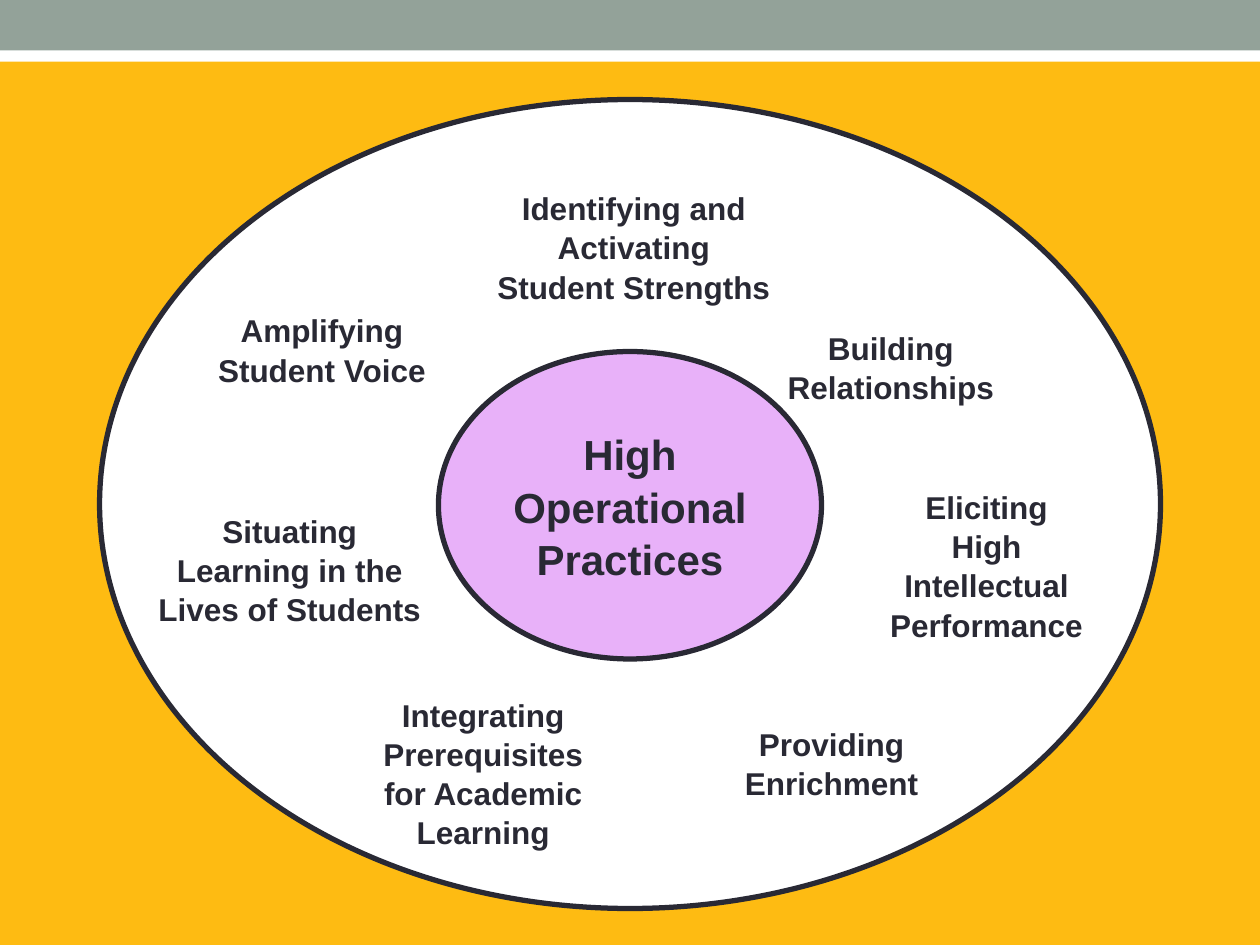
"""Build the High Operational Practices slide."""
from dataclasses import dataclass
from typing import Any

from pptx import Presentation
from pptx.dml.color import RGBColor
from pptx.enum.shapes import MSO_SHAPE
from pptx.enum.text import MSO_ANCHOR, MSO_AUTO_SIZE, PP_ALIGN
from pptx.util import Inches, Pt

GOLD = RGBColor(0xFE, 0xBB, 0x12)
SAGE = RGBColor(0x93, 0xA2, 0x99)
WHITE = RGBColor(0xFF, 0xFF, 0xFF)
LILAC = RGBColor(0xE8, 0xB1, 0xF9)
INK = RGBColor(0x29, 0x29, 0x34)

PRACTICES = [
    ("Identifying and Activating Student Strengths", 3.84, 1.44, 2.38, 1.01),
    ("Providing Enrichment", 5.58, 5.69, 2.04, 0.71),
    ("Building Relationships", 6.1, 2.55, 1.94, 0.71),
    ("Eliciting High Intellectual Performance", 6.96, 3.81, 1.74, 1.31),
    ("Integrating Prerequisites for Academic Learning", 2.81, 5.46, 2.05, 1.31),
    ("Situating Learning in the Lives of Students", 1.15, 4, 2.3, 1.01),
    ("Amplifying Student Voice", 1.47, 2.41, 2.17, 0.71),
]


@dataclass
class Painter:
    slide: Any
    font: str = "Arial"
    ink: RGBColor = INK
    outline: float = 3
    spacing: float = 1.04

    def add_text(self, tf, text, size):
        tf.word_wrap = True
        p = tf.paragraphs[0]
        p.alignment = PP_ALIGN.CENTER
        p.line_spacing = self.spacing
        r = p.add_run()
        r.text = text
        r.font.name = self.font
        r.font.size = Pt(size)
        r.font.bold = True
        r.font.color.rgb = self.ink

    def shape(self, kind, box, color):
        sp = self.slide.shapes.add_shape(kind, *map(Inches, box))
        sp.shadow.inherit = False
        sp.fill.solid()
        sp.fill.fore_color.rgb = color
        return sp

    def band(self, top, height, color):
        sp = self.shape(MSO_SHAPE.RECTANGLE, (0, top, 10, height), color)
        sp.line.fill.background()

    def ellipse(self, box, color, text=None):
        sp = self.shape(MSO_SHAPE.OVAL, box, color)
        sp.line.color.rgb = self.ink
        sp.line.width = Pt(self.outline)
        if text:
            sp.text_frame.vertical_anchor = MSO_ANCHOR.MIDDLE
            self.add_text(sp.text_frame, text, 24)

    def label(self, text, *box):
        tf = self.slide.shapes.add_textbox(*map(Inches, box)).text_frame
        tf.auto_size = MSO_AUTO_SIZE.SHAPE_TO_FIT_TEXT
        self.add_text(tf, text, 18)


def main():
    prs = Presentation()
    prs.slide_width, prs.slide_height = Inches(10), Inches(7.5)
    s = prs.slides.add_slide(prs.slide_layouts[6])
    s.background.fill.solid()
    s.background.fill.fore_color.rgb = GOLD

    painter = Painter(s)
    painter.band(0.24, 0.25, WHITE)
    painter.band(0, 0.4, SAGE)
    painter.ellipse((0.79, 0.79, 8.42, 6.42), WHITE)
    painter.ellipse((3.48, 2.79, 3.04, 2.44), LILAC, "High Operational Practices")
    for practice in PRACTICES:
        painter.label(*practice)
    prs.save("out.pptx")


if __name__ == "__main__":
    main()
